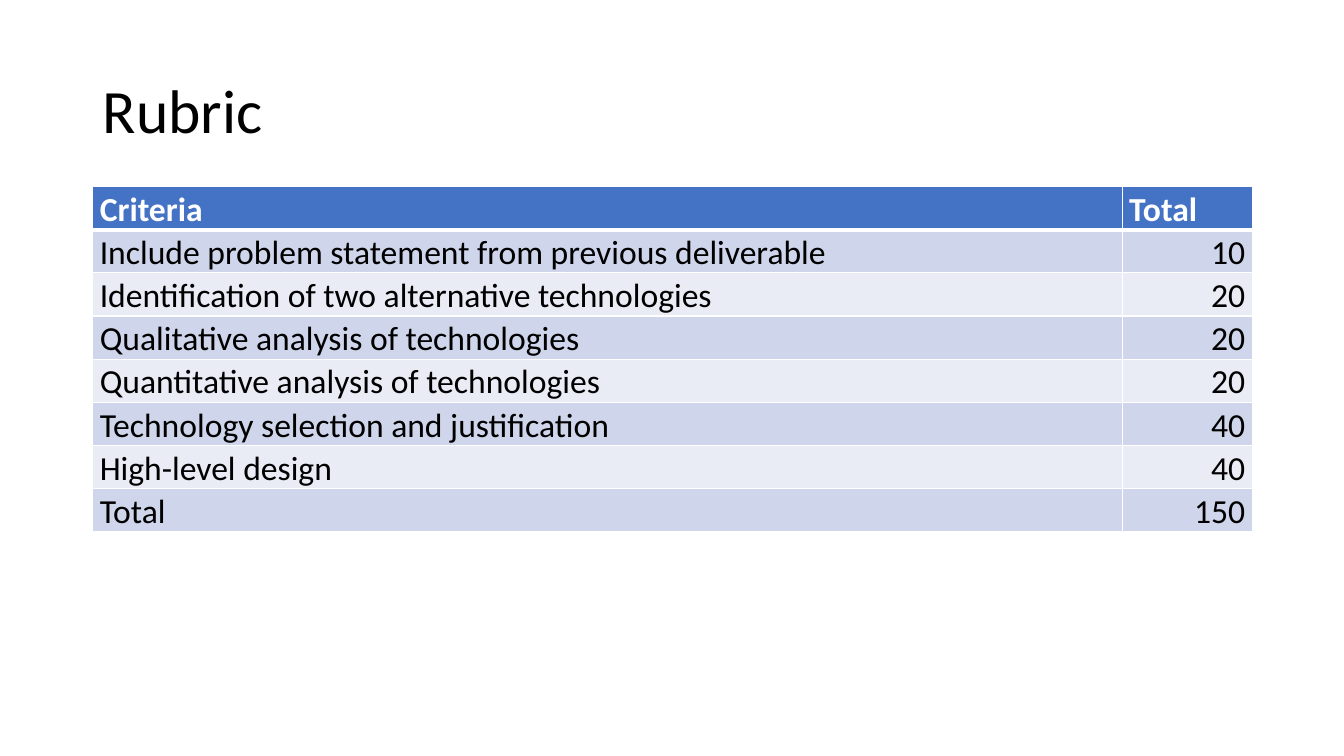
"""Build the rubric slide: a title above a two-column table of criteria and points."""
from dataclasses import dataclass

from lxml.etree import SubElement
from pptx import Presentation
from pptx.dml.color import RGBColor
from pptx.enum.text import MSO_ANCHOR, PP_ALIGN
from pptx.oxml.ns import qn
from pptx.util import Inches, Pt

TITLE = "Rubric"
HEADER = ("Criteria", "Total")
CRITERIA = [
    ("Include problem statement from previous deliverable", 10),
    ("Identification of two alternative technologies", 20),
    ("Qualitative analysis of technologies", 20),
    ("Quantitative analysis of technologies", 20),
    ("Technology selection and justification", 40),
    ("High-level design", 40),
    ("Total", 150),
]
LEFT, WIDTH = 0.92, 11.5
TITLE_TOP, TITLE_HEIGHT = 0.4, 1.45
TABLE_TOP, TABLE_HEIGHT = 1.85, 3.27
COLUMN_WIDTHS = (10.21, 1.29)


@dataclass(frozen=True)
class Theme:
    """Colours, font and type sizes of the slide."""
    font: str = "Calibri"
    title_size: int = 44
    table_size: int = 24
    text: str = "000000"
    header_text: str = "FFFFFF"
    header_fill: str = "4472C4"
    bands: tuple = ("CFD5EA", "E9EBF5")
    border: str = "FFFFFF"
    thin: int = 1
    thick: int = 3


THEME = Theme()


def set_all(target, values):
    """Set each named attribute on the target."""
    for name, value in values.items():
        setattr(target, name, value)


def write(text_frame, text, size, color, bold=False, **paragraph_format):
    """Write one formatted paragraph."""
    paragraph = text_frame.paragraphs[0]
    set_all(paragraph, paragraph_format)
    run = paragraph.add_run()
    run.text = text
    set_all(run.font, {"name": THEME.font, "size": Pt(size), "bold": bold})
    run.font.color.rgb = RGBColor.from_string(color)


def add_borders(cell, top, bottom):
    """Draw the four borders of a cell, with widths in points."""
    properties = cell._tc.get_or_add_tcPr()
    widths = {"a:lnL": THEME.thin, "a:lnR": THEME.thin, "a:lnT": top, "a:lnB": bottom}
    for tag, width in widths.items():
        line = SubElement(properties, qn(tag), w=str(Pt(width)))
        fill = SubElement(line, qn("a:solidFill"))
        SubElement(fill, qn("a:srgbClr"), val=THEME.border)


def add_title(slide):
    """Add the slide title."""
    box = slide.shapes.add_textbox(
        Inches(LEFT), Inches(TITLE_TOP), Inches(WIDTH), Inches(TITLE_HEIGHT))
    set_all(box.text_frame, {"word_wrap": True, "vertical_anchor": MSO_ANCHOR.MIDDLE})
    write(box.text_frame, TITLE, THEME.title_size, THEME.text, line_spacing=0.9)


def format_cell(cell, row, column, text):
    """Fill, border and write one table cell."""
    is_header = row == 0
    set_all(cell, {"margin_left": Inches(0.07), "margin_right": Inches(0.07),
                   "margin_top": 0, "margin_bottom": 0})
    add_borders(cell, top=THEME.thick if row == 1 else THEME.thin,
                bottom=THEME.thick if is_header else THEME.thin)
    fill = THEME.header_fill if is_header else THEME.bands[(row - 1) % 2]
    cell.fill.solid()
    cell.fill.fore_color.rgb = RGBColor.from_string(fill)
    align_right = column == 1 and not is_header
    write(cell.text_frame, str(text), THEME.table_size,
          THEME.header_text if is_header else THEME.text, bold=is_header,
          alignment=PP_ALIGN.RIGHT if align_right else PP_ALIGN.LEFT,
          line_spacing=1.07, space_before=Pt(6))


def add_rubric(slide):
    """Add the table of criteria."""
    rows = [HEADER, *CRITERIA]
    table = slide.shapes.add_table(
        len(rows), len(HEADER), Inches(LEFT), Inches(TABLE_TOP),
        Inches(WIDTH), Inches(TABLE_HEIGHT)).table
    for column, width in zip(table.columns, COLUMN_WIDTHS):
        column.width = Inches(width)
    for row, values in enumerate(rows):
        for column, text in enumerate(values):
            format_cell(table.cell(row, column), row, column, text)


def main():
    """Build and save the presentation."""
    presentation = Presentation()
    set_all(presentation, {"slide_width": Inches(13.33), "slide_height": Inches(7.5)})
    slide = presentation.slides.add_slide(presentation.slide_layouts[6])
    add_title(slide)
    add_rubric(slide)
    presentation.save("out.pptx")


if __name__ == "__main__":
    main()
